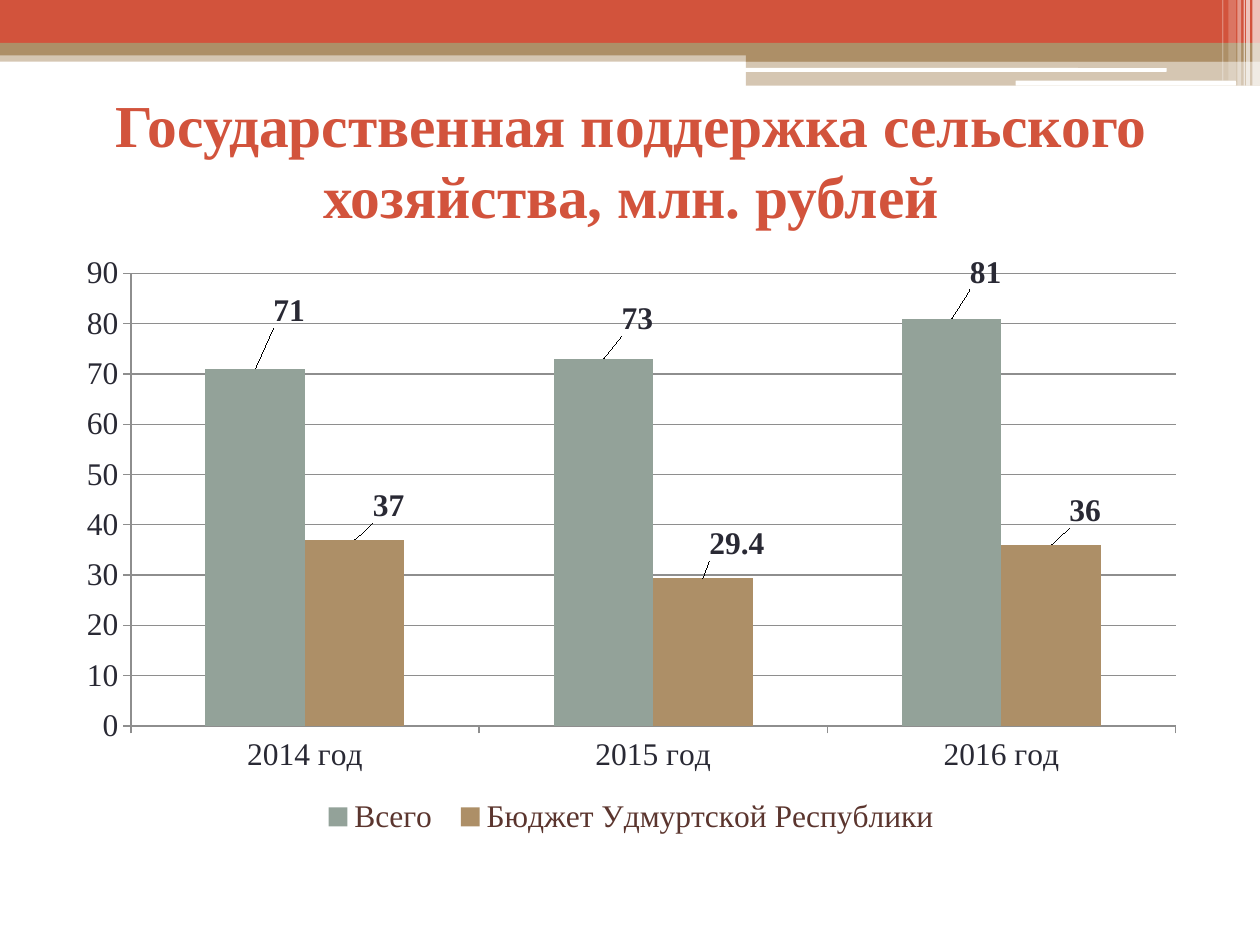
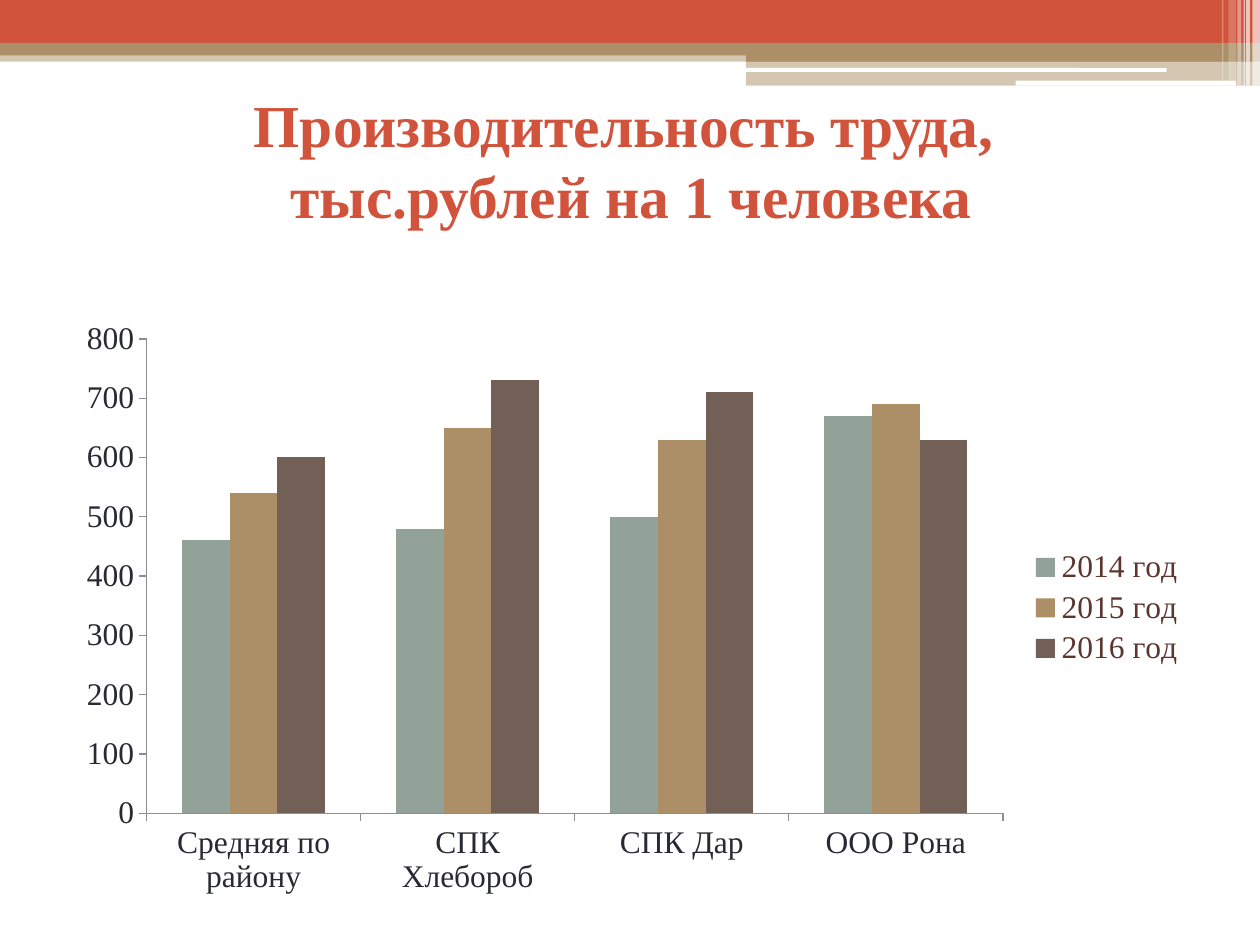
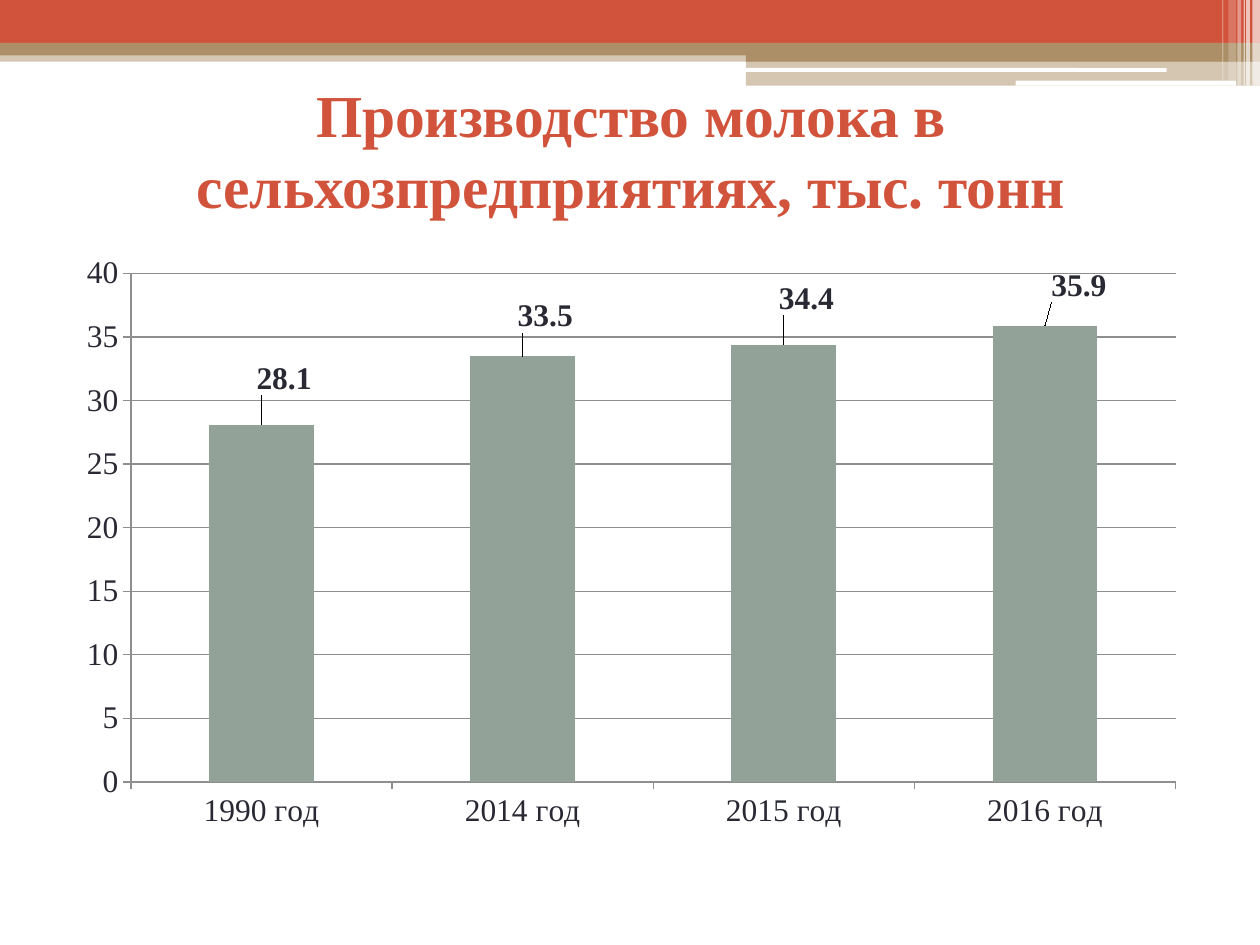
import pptx
import pptx.chart.data
import pptx.dml.color
import pptx.enum.chart
import pptx.enum.shapes
import pptx.enum.text
import pptx.oxml
import pptx.oxml.ns
import pptx.util

RGBColor = pptx.dml.color.RGBColor
RED = RGBColor(0xD2, 0x53, 0x3C)
TAN = RGBColor(0xAD, 0x8F, 0x67)
SAGE = RGBColor(0x93, 0xA2, 0x99)
UMBER = RGBColor(0x72, 0x60, 0x56)
INK = RGBColor(0x29, 0x29, 0x34)
BROWN = RGBColor(0x5B, 0x35, 0x2E)
GREY = RGBColor(0x8E, 0x8E, 0x8E)
WHITE = RGBColor(0xFF, 0xFF, 0xFF)

FONT = "Times New Roman"
COLUMNS, ROWS = 100, 75
RECT = pptx.enum.shapes.MSO_SHAPE.RECTANGLE
ROUND = pptx.enum.shapes.MSO_SHAPE.ROUNDED_RECTANGLE
LEGEND = pptx.enum.chart.XL_LEGEND_POSITION

# Header bands, back to front: shape, (column, row, columns, rows), colour, opacity %
BANDS = [
    (RECT, (0, 4, 100, 0.9), TAN, 50),
    (RECT, (0, 0, 100, 3.4), RED, 100),
    (RECT, (0, 3.4, 100, 1), TAN, 100),
    (RECT, (59.2, 3.9, 40.8, 1), TAN, 100),
    (RECT, (59.2, 4.85, 40.8, 1.95), TAN, 50),
    (ROUND, (59.1, 5.4, 33.5, 0.3), WHITE, 100),
    (ROUND, (80.6, 6.4, 17.5, 0.4), WHITE, 100),
]
# Pale stripes at the right edge: column, columns, rows, opacity %
STRIPES = [
    (99.4, 0.6, 6.8, 65), (98.9, 0.3, 6.8, 65), (98.7, 0.1, 6.8, 60),
    (98.2, 0.3, 6.8, 40), (97.5, 0.6, 6.4, 20), (97, 0.1, 6.4, 30),
]


class Report:
    """Holds the deck, its style and the current slide."""

    def __init__(self):
        self.deck = pptx.Presentation()
        self.deck.slide_width = pptx.util.Inches(10)
        self.deck.slide_height = pptx.util.Inches(7.5)
        self.page = None

    def place(self, column, row, columns, rows):
        across = self.deck.slide_width / COLUMNS
        down = self.deck.slide_height / ROWS
        return [pptx.util.Emu(round(size)) for size in
                (column * across, row * down, columns * across, rows * down)]

    def style(self, font, size, color, bold=False):
        font.name, font.size, font.bold = FONT, pptx.util.Pt(size), bold
        font.color.rgb = color

    def add_page(self):
        self.page = self.deck.slides.add_slide(self.deck.slide_layouts[5])

    def band(self, kind, area, color, opacity):
        shape = self.page.shapes.add_shape(kind, *self.place(*area))
        shape.shadow.inherit = False
        shape.line.fill.background()
        shape.fill.solid()
        shape.fill.fore_color.rgb = color
        if opacity < 100:
            tone = shape.element.xpath("./p:spPr/a:solidFill/a:srgbClr")[0]
            alpha = pptx.oxml.parse_xml(
                f'<a:alpha {pptx.oxml.ns.nsdecls("a")} val="{opacity * 1000}"/>')
            tone.append(alpha)
        return shape

    def header(self):
        """Draw the bands once and move them to the back of the slide master."""
        stripes = [(RECT, (column, 0, columns, rows), WHITE, opacity)
                   for column, columns, rows, opacity in STRIPES]
        tree = self.deck.slide_master.shapes.element
        for index, band in enumerate(BANDS + stripes):
            element = self.band(*band).element
            element.xpath("./p:nvSpPr/p:cNvPr")[0].set("id", str(100 + index))
            tree.insert(2 + index, element)

    def title(self, text, row=6.8):
        box = self.page.shapes.title
        box.left, box.top, box.width, box.height = self.place(5.1, row, 90, 11.7)
        frame = box.text_frame
        frame.auto_size = pptx.enum.text.MSO_AUTO_SIZE.NONE
        frame.vertical_anchor = pptx.enum.text.MSO_ANCHOR.MIDDLE
        frame.text = text
        para = frame.paragraphs[0]
        para.alignment = pptx.enum.text.PP_ALIGN.CENTER
        self.style(para.font, 34, RED, bold=True)

    def columns(self, categories, series, top, step, row=19.4, grid=True, legend=None):
        """Column chart; series is a list of (name, values, colour)."""
        data = pptx.chart.data.CategoryChartData()
        data.categories = categories
        for name, values, _ in series:
            data.add_series(name, values)
        chart = self.page.shapes.add_chart(
            pptx.enum.chart.XL_CHART_TYPE.COLUMN_CLUSTERED,
            *self.place(5.1, row, 90, 47.3), data).chart
        self.style(chart.font, 18, INK)
        chart.has_title = False
        chart.has_legend = legend is not None
        if chart.has_legend:
            chart.legend.position = legend
            chart.legend.include_in_layout = False
            self.style(chart.legend.font, 18, BROWN)

        plot = chart.plots[0]
        plot.gap_width, plot.overlap, plot.vary_by_categories = 150, 0, False
        for bars, (_, _, color) in zip(plot.series, series):
            bars.format.fill.solid()
            bars.format.fill.fore_color.rgb = color

        scale = chart.value_axis
        scale.minimum_scale, scale.maximum_scale, scale.major_unit = 0, top, step
        scale.has_major_gridlines = grid
        lines = [scale.format.line, chart.category_axis.format.line]
        if grid:
            lines.append(scale.major_gridlines.format.line)
        for line in lines:
            line.color.rgb = GREY
            line.width = pptx.util.Pt(0.75)
        for axis in (scale, chart.category_axis):
            axis.major_tick_mark = pptx.enum.chart.XL_TICK_MARK.OUTSIDE
        return plot

    def labels(self, bars, shifts):
        """Bold value labels, shifted by shares of the chart's size."""
        for index, (across, down) in enumerate(shifts):
            label = bars.points[index].data_label
            label.position = pptx.enum.chart.XL_LABEL_POSITION.OUTSIDE_END
            self.style(label.font, 18, INK, bold=True)
            layout = pptx.oxml.parse_xml(
                f'<c:layout {pptx.oxml.ns.nsdecls("c")}><c:manualLayout>'
                f'<c:x val="{across}"/><c:y val="{down}"/>'
                '</c:manualLayout></c:layout>')
            entry = bars.points[index].data_label.font and bars._element.xpath(
                f"./c:dLbls/c:dLbl[c:idx/@val='{index}']")[0]
            entry.insert(1, layout)


def main():
    report = Report()

    # State support
    report.add_page()
    report.header()
    report.title("Государственная поддержка сельского хозяйства, млн. рублей")
    support = report.columns(
        ["2014 год", "2015 год", "2016 год"],
        [("Всего ", (71, 73, 81), SAGE),
         ("Бюджет Удмуртской Республики", (37, 29.4, 36), TAN)],
        top=90, step=10, legend=LEGEND.BOTTOM)
    report.labels(support.series[0], [(0.03, -0.06), (0.03, -0.03), (0.03, -0.04)])
    report.labels(support.series[1], [(0.03, -0.02)] * 3)

    # Labour productivity
    report.add_page()
    report.title("Производительность труда, \vтыс.рублей на 1 человека")
    report.columns(
        ["Средняя по району", "СПК Хлебороб", "СПК Дар", "ООО Рона"],
        [("2014 год", (460, 480, 500, 670), SAGE),
         ("2015 год", (540, 650, 630, 690), TAN),
         ("2016 год", (600, 730, 710, 630), UMBER)],
        top=800, step=100, row=24.6, grid=False, legend=LEGEND.RIGHT)

    # Milk production
    report.add_page()
    report.title("Производство молока в сельхозпредприятиях, тыс. тонн", row=6)
    milk = report.columns(
        ["1990 год", "2014 год", "2015 год", "2016 год"],
        [("Series 1", (28.1, 33.5, 34.4, 35.9), SAGE)], top=40, step=5)
    report.labels(milk.series[0],
                  [(0.02, -0.04), (0.02, -0.03), (0.02, -0.04), (0.03, -0.03)])

    report.deck.save("out.pptx")


if __name__ == "__main__":
    main()
